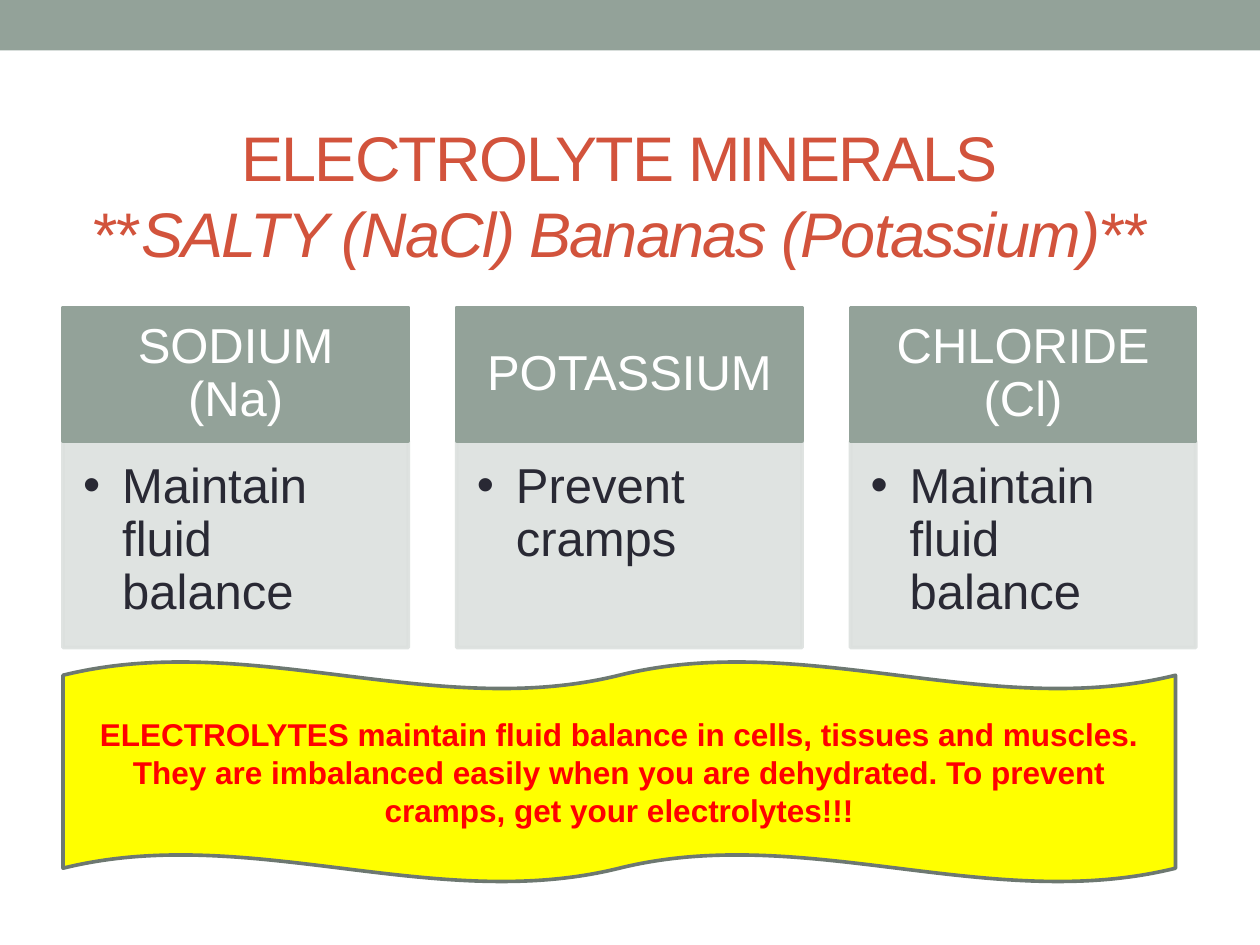
from dataclasses import dataclass

from lxml import etree
from pptx import Presentation
from pptx.dml.color import RGBColor
from pptx.enum.shapes import MSO_SHAPE
from pptx.enum.text import MSO_ANCHOR, MSO_AUTO_SIZE, PP_ALIGN
from pptx.oxml.ns import qn
from pptx.util import Inches, Pt

RECTANGLE = MSO_SHAPE.RECTANGLE
DOUBLE_WAVE = MSO_SHAPE.DOUBLE_WAVE
TOP, MIDDLE = MSO_ANCHOR.TOP, MSO_ANCHOR.MIDDLE
LEFT, CENTER = PP_ALIGN.LEFT, PP_ALIGN.CENTER
NO_FIT = MSO_AUTO_SIZE.NONE
COMPARISON_LAYOUT = 4


@dataclass(frozen=True)
class Theme:
    font: str = "Arial"
    sage: str = "93A299"
    mist: str = "DCE0DE"
    ink: str = "292934"
    white: str = "FFFFFF"
    rust: str = "D2533C"
    yellow: str = "FFFF00"
    red: str = "FF0000"
    outline: str = "6D7871"
    title_size: int = 36
    column_size: int = 28
    banner_size: int = 18
    line_width: float = 2.08


THEME = Theme()
COLUMNS = [
    ("SODIUM (Na)", "Maintain fluid balance", 2),
    ("POTASSIUM", "Prevent cramps", 4),
    ("CHLORIDE (Cl)", "Maintain fluid balance", 1),
]
COLUMN_LEFT, COLUMN_PITCH, COLUMN_WIDTH = 0.5, 3.125, 2.74
HEADER_TOP, HEADER_HEIGHT, BODY_HEIGHT = 2.44, 1.06, 1.64
BANNER = (
    "ELECTROLYTES maintain fluid balance in cells, tissues and muscles. "
    "They are imbalanced easily when you are dehydrated. "
    "To prevent cramps, get your electrolytes!!!"
)


def place(shape, left, top, width, height):
    shape.left, shape.top = Inches(left), Inches(top)
    shape.width, shape.height = Inches(width), Inches(height)


def paint(shape, fill, line=None):
    shape.fill.solid()
    shape.fill.fore_color.rgb = RGBColor.from_string(fill)
    if line:
        shape.line.color.rgb = RGBColor.from_string(line)
        shape.line.width = Pt(THEME.line_width)
    else:
        shape.line.fill.background()


def fade(shape, percent):
    for color in shape._element.spPr.iter(qn("a:srgbClr")):
        etree.SubElement(color, qn("a:alpha"), val=str(percent * 1000))


def add_box(slide, kind, area, fill, line=None):
    box = slide.shapes.add_shape(kind, *map(Inches, area))
    box.shadow.inherit = False
    paint(box, fill, line)
    return box


def set_frame(frame, anchor, insets=(0.1, 0.05, 0.1, 0.05)):
    frame.word_wrap = True
    frame.auto_size = NO_FIT
    frame.vertical_anchor = anchor
    (frame.margin_left, frame.margin_top,
     frame.margin_right, frame.margin_bottom) = map(Inches, insets)


def add_span(para, text, *, size, color, bold=False, italic=False, spacing=0):
    span = para.add_run()
    span.text = text
    span.font.name = THEME.font
    span.font.size = Pt(size)
    span.font.bold = bold
    span.font.italic = italic
    span.font.color.rgb = RGBColor.from_string(color)
    if spacing:
        span._r.get_or_add_rPr().set("spc", str(spacing * 100))


def set_paragraph(para, align, line_spacing=1.0):
    para.alignment = align
    para.line_spacing = line_spacing
    para.space_before = para.space_after = Pt(0)


def add_bullet(para, indent):
    properties = para._p.get_or_add_pPr()
    properties.set("marL", str(Inches(indent)))
    properties.set("indent", str(-Inches(indent)))
    etree.SubElement(properties, qn("a:buFont"), typeface=THEME.font)
    etree.SubElement(properties, qn("a:buChar"), char="•")


def fill_title(title):
    place(title, 0.42, 1, 9, 1.08)
    set_frame(title.text_frame, MIDDLE)
    para = title.text_frame.paragraphs[0]
    set_paragraph(para, CENTER)
    look = dict(size=THEME.title_size, color=THEME.rust, spacing=-1)
    add_span(para, "ELECTROLYTE MINERALS", **look)
    para.add_line_break()
    add_span(para, "**", **look)
    add_span(para, "SALTY (NaCl) Bananas (Potassium)**", italic=True, **look)


def add_header(slide, text, left):
    area = (left, HEADER_TOP, COLUMN_WIDTH, HEADER_HEIGHT)
    header = add_box(slide, RECTANGLE, area, THEME.sage, THEME.sage)
    set_frame(header.text_frame, MIDDLE, (0.22, 0.12, 0.22, 0.12))
    para = header.text_frame.paragraphs[0]
    set_paragraph(para, CENTER, 0.9)
    add_span(para, text, size=THEME.column_size, color=THEME.white)


def fill_list(body, text, left):
    place(body, left, HEADER_TOP + HEADER_HEIGHT, COLUMN_WIDTH, BODY_HEIGHT)
    paint(body, THEME.mist, THEME.mist)
    fade(body, 90)
    set_frame(body.text_frame, TOP, (0.16, 0.16, 0.22, 0.24))
    para = body.text_frame.paragraphs[0]
    set_paragraph(para, LEFT, 0.9)
    add_bullet(para, 0.31)
    add_span(para, text, size=THEME.column_size, color=THEME.ink)


def add_banner(slide, text):
    banner = add_box(slide, DOUBLE_WAVE, (0.5, 5.25, 8.83, 1.75), THEME.yellow, THEME.outline)
    set_frame(banner.text_frame, MIDDLE)
    para = banner.text_frame.paragraphs[0]
    set_paragraph(para, CENTER)
    add_span(para, text, size=THEME.banner_size, color=THEME.red, bold=True)


def remove_empty_placeholders(slide):
    for holder in list(slide.placeholders):
        if not holder.text_frame.text:
            holder._element.getparent().remove(holder._element)


def main():
    deck = Presentation()
    deck.slide_width, deck.slide_height = Inches(10), Inches(7.5)
    slide = deck.slides.add_slide(deck.slide_layouts[COMPARISON_LAYOUT])
    bodies = {holder.placeholder_format.idx: holder for holder in slide.placeholders}
    add_box(slide, RECTANGLE, (0, 0, 10, 0.4), THEME.sage)
    fill_title(slide.shapes.title)
    for number, (heading, benefit, body_index) in enumerate(COLUMNS):
        left = COLUMN_LEFT + number * COLUMN_PITCH
        add_header(slide, heading, left)
        fill_list(bodies[body_index], benefit, left)
    add_banner(slide, BANNER)
    remove_empty_placeholders(slide)
    deck.save("out.pptx")


if __name__ == "__main__":
    main()
